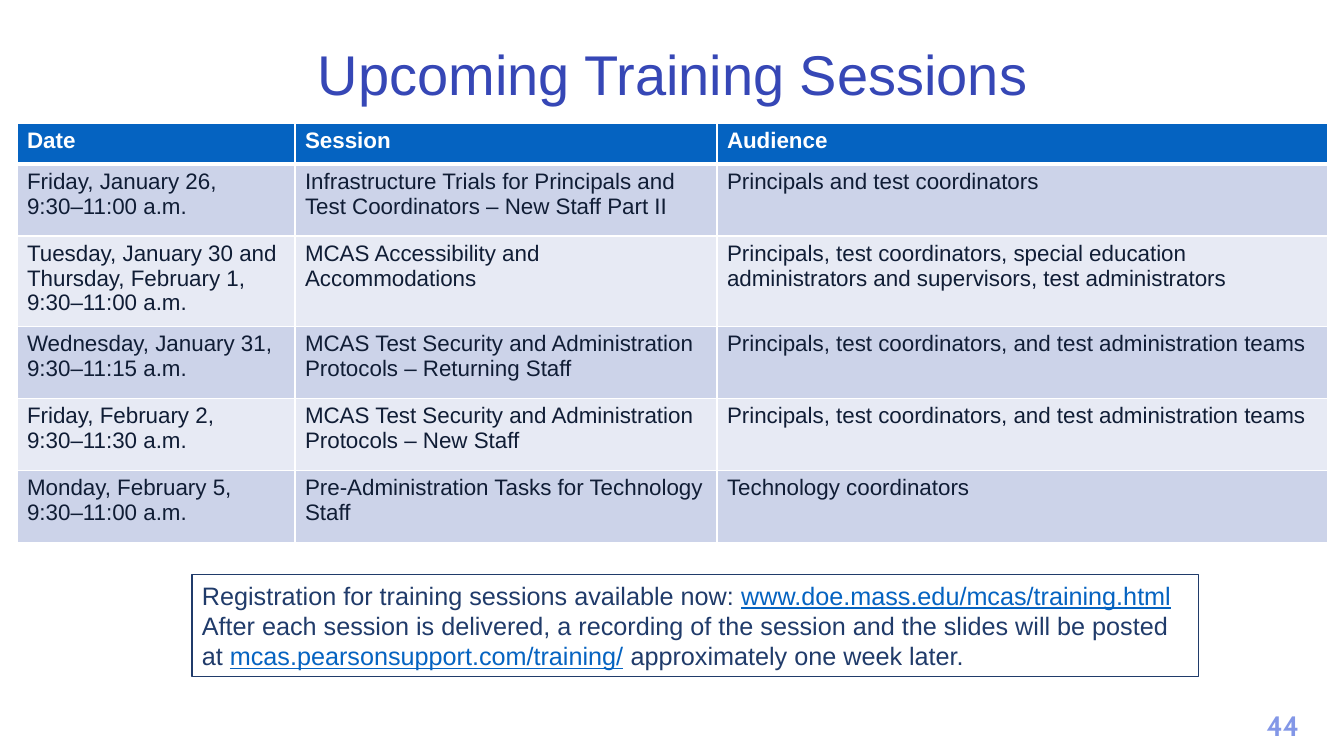
from lxml import etree
from pptx import Presentation
from pptx.dml.color import RGBColor
from pptx.enum.shapes import MSO_SHAPE
from pptx.enum.text import MSO_ANCHOR, PP_ALIGN
from pptx.oxml.ns import qn
from pptx.util import Emu, Pt

PX = 914400 / 100.8
WHITE = RGBColor(0xFF, 0xFF, 0xFF)
TITLE_BLUE = RGBColor(0x36, 0x47, 0xB6)
LINK_BLUE = RGBColor(0x05, 0x63, 0xC1)
NAVY = RGBColor(0x20, 0x3B, 0x6A)
INK = RGBColor(0x10, 0x1D, 0x35)
BAND_DARK = RGBColor(0xCC, 0xD3, 0xE9)
BAND_LIGHT = RGBColor(0xE7, 0xEA, 0xF4)
NUMBER_BLUE = RGBColor(0x83, 0x97, 0xE7)

SESSIONS = [
    ("Date", "Session", "Audience"),
    ("Friday, January 26,\n9:30–11:00 a.m.",
     "Infrastructure Trials for Principals and Test Coordinators – New Staff Part II",
     "Principals and test coordinators"),
    ("Tuesday, January 30 and\nThursday, February 1, 9:30–11:00 a.m.",
     "MCAS Accessibility and Accommodations",
     "Principals, test coordinators, special education administrators and supervisors, "
     "test administrators"),
    ("Wednesday, January 31, 9:30–11:15 a.m.",
     "MCAS Test Security and Administration Protocols – Returning Staff",
     "Principals, test coordinators, and test administration teams"),
    ("Friday, February 2,\n9:30–11:30 a.m.",
     "MCAS Test Security and Administration Protocols – New Staff",
     "Principals, test coordinators, and test administration teams"),
    ("Monday, February 5,\n9:30–11:00 a.m.",
     "Pre-Administration Tasks for Technology Staff",
     "Technology coordinators"),
]
# Each line is a list of (text, is_link) runs.
REGISTRATION = [
    [("Registration for training sessions available now: ", False),
     ("www.doe.mass.edu/mcas/training.html", True)],
    [("After each session is delivered, a recording of the session and the slides "
      "will be posted at ", False),
     ("mcas.pearsonsupport.com/training/", True),
     (" approximately one week later.", False)],
]


def px(*lengths):
    return [Emu(round(length * PX)) for length in lengths]


def style_font(paragraph, name, size, color, bold=False):
    font = paragraph.font
    font.name, font.size, font.bold = name, Pt(size), bold
    font.color.rgb = color


presentation = Presentation()
presentation.slide_width, presentation.slide_height = px(1344, 756)
slide = presentation.slides.add_slide(presentation.slide_layouts[6])

# Title and slide number
for text, box, name, size, color, bold, anchor in [
    ("44", (1252, 704, 62, 44), "Cabin", 20, NUMBER_BLUE, True, MSO_ANCHOR.TOP),
    ("Upcoming Training Sessions", (93, 20, 1159, 115), "Arial", 40, TITLE_BLUE, False,
     MSO_ANCHOR.MIDDLE),
]:
    frame = slide.shapes.add_textbox(*px(*box)).text_frame
    frame.word_wrap = True
    frame.vertical_anchor = anchor
    frame.text = text
    paragraph = frame.paragraphs[0]
    paragraph.alignment = PP_ALIGN.CENTER
    paragraph.line_spacing = 0.9 if anchor == MSO_ANCHOR.MIDDLE else 1.0
    style_font(paragraph, name, size, color, bold)

# Training table
column_widths = px(278, 422, 611)
row_heights = px(41, 72, 72, 72, 72, 72)
table = slide.shapes.add_table(len(SESSIONS), 3, *px(17, 123, 1311, 401)).table
for column, width in zip(table.columns, column_widths):
    column.width = width
for row, height in zip(table.rows, row_heights):
    row.height = height

for row_index, session in enumerate(SESSIONS):
    header = row_index == 0
    band = LINK_BLUE if header else BAND_DARK if row_index % 2 else BAND_LIGHT
    for column_index, text in enumerate(session):
        cell = table.cell(row_index, column_index)
        cell.text = text
        for paragraph in cell.text_frame.paragraphs:
            style_font(paragraph, "Arial", 16, WHITE if header else INK, header)
        # Borders come before the fill in the cell properties
        properties = cell._tc.get_or_add_tcPr()
        for side in ("lnL", "lnR", "lnT", "lnB"):
            thick = header and side == "lnB" or row_index == 1 and side == "lnT"
            border = etree.SubElement(properties, qn("a:" + side),
                                      w=str(Pt(3 if thick else 1)))
            solid = etree.SubElement(border, qn("a:solidFill"))
            etree.SubElement(solid, qn("a:srgbClr"), val=str(WHITE))
        cell.fill.solid()
        cell.fill.fore_color.rgb = band

# Registration box
registration_box = slide.shapes.add_shape(MSO_SHAPE.RECTANGLE, *px(192, 575, 1007, 102))
registration_box.shadow.inherit = False
registration_box.fill.solid()
registration_box.fill.fore_color.rgb = WHITE
registration_box.line.color.rgb = NAVY
registration_box.line.width = Pt(0.75)
frame = registration_box.text_frame
frame.word_wrap = True
frame.vertical_anchor = MSO_ANCHOR.TOP
for index, line in enumerate(REGISTRATION):
    paragraph = frame.add_paragraph() if index else frame.paragraphs[0]
    paragraph.alignment = PP_ALIGN.LEFT
    style_font(paragraph, "Arial", 18, NAVY)
    for text, is_link in line:
        run = paragraph.add_run()
        run.text = text
        run.font.underline = is_link
        run.font.color.rgb = LINK_BLUE if is_link else NAVY

presentation.save("out.pptx")
